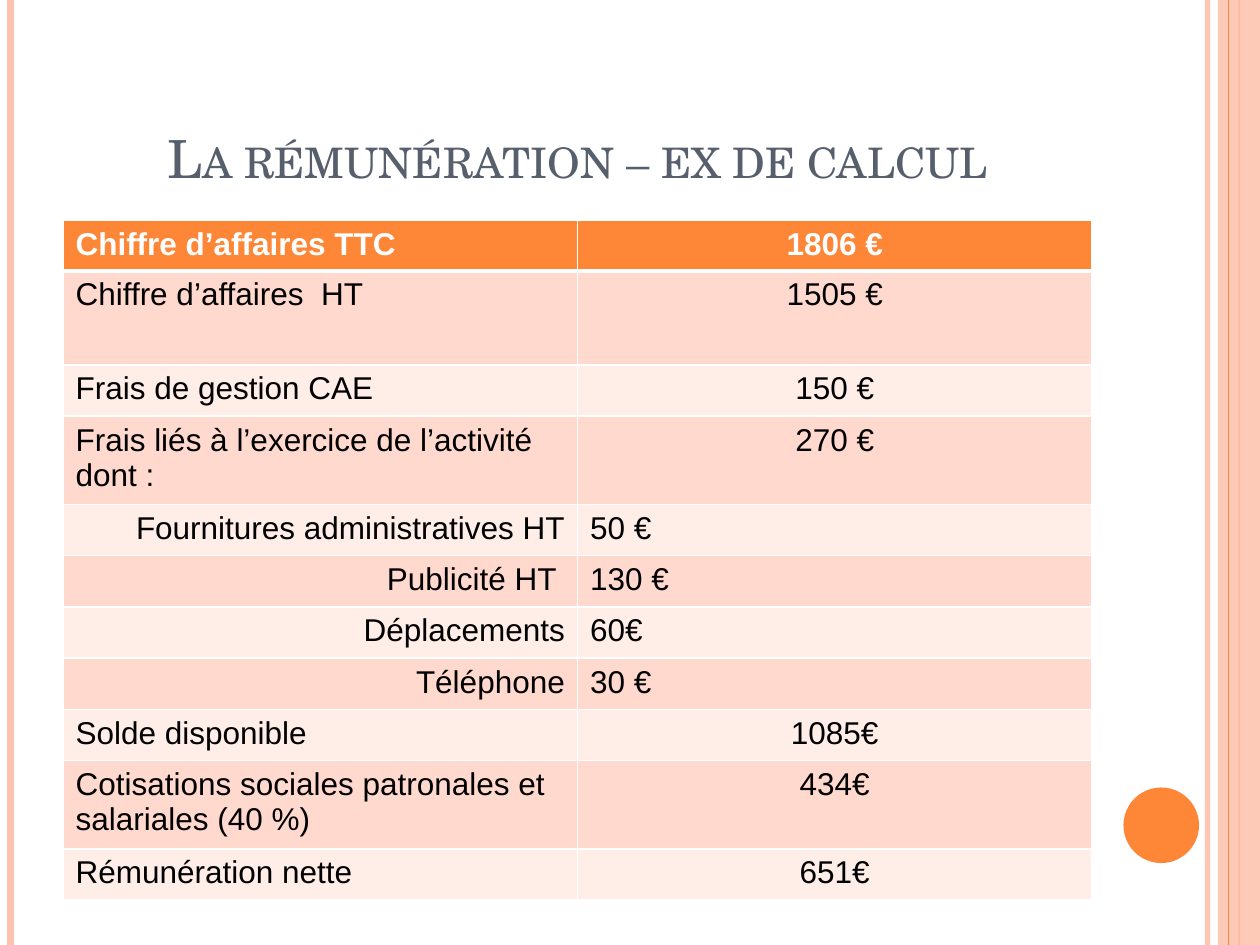
from dataclasses import dataclass

from lxml.etree import SubElement
from pptx import Presentation
from pptx.dml.color import RGBColor as Color
from pptx.enum.shapes import MSO_CONNECTOR as Connector, MSO_SHAPE as Shape
from pptx.enum.text import MSO_ANCHOR as Anchor, PP_ALIGN as Align
from pptx.oxml.ns import qn
from pptx.util import Pt


@dataclass(frozen=True)
class Theme:
    accent: str = "FE8637"
    stripe: str = "FEC3AE"
    heading: str = "575F6D"
    dark_band: str = "FFD9CE"
    light_band: str = "FFEDE8"
    white: str = "FFFFFF"
    black: str = "000000"
    title_font: str = "TeX Gyre Schola"
    body_font: str = "Arial"
    title_size: float = 30
    body_size: float = 18


THEME = Theme()
WIDTH, HEIGHT = 720, 540

TOTAL = (Align.LEFT, Align.CENTER)
DETAIL = (Align.RIGHT, Align.LEFT)
SINGLE, DOUBLE = 29.3, 47.3
ROWS = [
    ("Chiffre d’affaires TTC", "1806 €", TOTAL, 28.3),
    ("Chiffre d’affaires  HT", "1505 €", TOTAL, 53.7),
    ("Frais de gestion CAE", "150 €", TOTAL, SINGLE),
    ("Frais liés à l’exercice de l’activité dont :", "270 €", TOTAL, DOUBLE),
    ("Fournitures administratives HT", "50 €", DETAIL, SINGLE),
    ("Publicité HT ", "130 €", DETAIL, SINGLE),
    ("Déplacements", "60€", DETAIL, SINGLE),
    ("Téléphone", "30 €", DETAIL, SINGLE),
    ("Solde disponible", "1085€", TOTAL, SINGLE),
    ("Cotisations sociales patronales et salariales (40 %)", "434€", TOTAL, DOUBLE),
    ("Rémunération nette", "651€", TOTAL, SINGLE),
]


def set_opacity(shape, percent):
    for color in shape._element.spPr.iter(qn("a:srgbClr")):
        SubElement(color, qn("a:alpha"), val=str(percent * 1000))


def add_stripe(page, x, color, width, opacity=100):
    stripe = page.shapes.add_connector(
        Connector.STRAIGHT, Pt(x), Pt(0), Pt(x), Pt(HEIGHT))
    stripe.line.color.rgb = Color.from_string(color)
    stripe.line.width = Pt(width)
    if opacity < 100:
        set_opacity(stripe, opacity)
    SubElement(stripe._element.spPr, qn("a:effectLst"))


def add_solid(page, kind, left, top, width, height, color, opacity=100):
    solid = page.shapes.add_shape(kind, Pt(left), Pt(top), Pt(width), Pt(height))
    solid.shadow.inherit = False
    solid.fill.solid()
    solid.fill.fore_color.rgb = Color.from_string(color)
    solid.line.fill.background()
    if opacity < 100:
        set_opacity(solid, opacity)


def add_span(para, text, font, size, color, bold=False):
    span = para.add_run()
    span.text = text
    span.font.name = font
    span.font.size = Pt(size)
    span.font.bold = bold
    span.font.color.rgb = Color.from_string(color)
    return span


def add_title(page, text):
    box = page.shapes.add_textbox(Pt(36), Pt(21.6), Pt(588), Pt(90))
    frame = box.text_frame
    frame.word_wrap = True
    frame.vertical_anchor = Anchor.BOTTOM
    para = frame.paragraphs[0]
    para.alignment = Align.CENTER
    span = add_span(para, text, THEME.title_font, THEME.title_size, THEME.heading)
    span._r.get_or_add_rPr().set("cap", "small")


def set_borders(cell, top, bottom):
    properties = cell._tc.get_or_add_tcPr()
    for side, width in (("L", 1), ("R", 1), ("T", top), ("B", bottom)):
        line = SubElement(properties, qn(f"a:ln{side}"), w=str(Pt(width)))
        fill = SubElement(line, qn("a:solidFill"))
        SubElement(fill, qn("a:srgbClr"), val=THEME.white)


def band_color(row):
    if row == 0:
        return THEME.accent
    return THEME.dark_band if row % 2 else THEME.light_band


def fill_cell(cell, row, text, align):
    header = row == 0
    set_borders(cell, top=3 if row == 1 else 1, bottom=3 if header else 1)
    cell.fill.solid()
    cell.fill.fore_color.rgb = Color.from_string(band_color(row))
    para = cell.text_frame.paragraphs[0]
    para.alignment = align
    add_span(para, text, THEME.body_font, THEME.body_size,
             THEME.white if header else THEME.black, header)


def add_pay_table(page):
    total_height = sum(height for *_, height in ROWS)
    table = page.shapes.add_table(
        len(ROWS), 2, Pt(36), Pt(126), Pt(588), Pt(total_height)).table
    table.horz_banding = False
    for index, (label, amount, aligns, height) in enumerate(ROWS):
        table.rows[index].height = Pt(height)
        for column, text in enumerate((label, amount)):
            fill_cell(table.cell(index, column), index, text, aligns[column])


def add_decor(page):
    add_stripe(page, 690, THEME.stripe, 3, 93)
    add_stripe(page, 6, THEME.stripe, 4.5)
    add_stripe(page, 708, THEME.accent, 1.5)
    add_solid(page, Shape.RECTANGLE, 696, 0, 24, HEIGHT, THEME.stripe, 87)
    add_stripe(page, 702, THEME.accent, 0.75)
    add_solid(page, Shape.OVAL, 642, 450, 43.2, 43.2, THEME.accent)


def main():
    deck = Presentation()
    deck.slide_width, deck.slide_height = Pt(WIDTH), Pt(HEIGHT)
    page = deck.slides.add_slide(deck.slide_layouts[6])
    add_decor(page)
    add_title(page, "La rémunération – ex de calcul")
    add_pay_table(page)
    deck.save("out.pptx")


if __name__ == "__main__":
    main()
